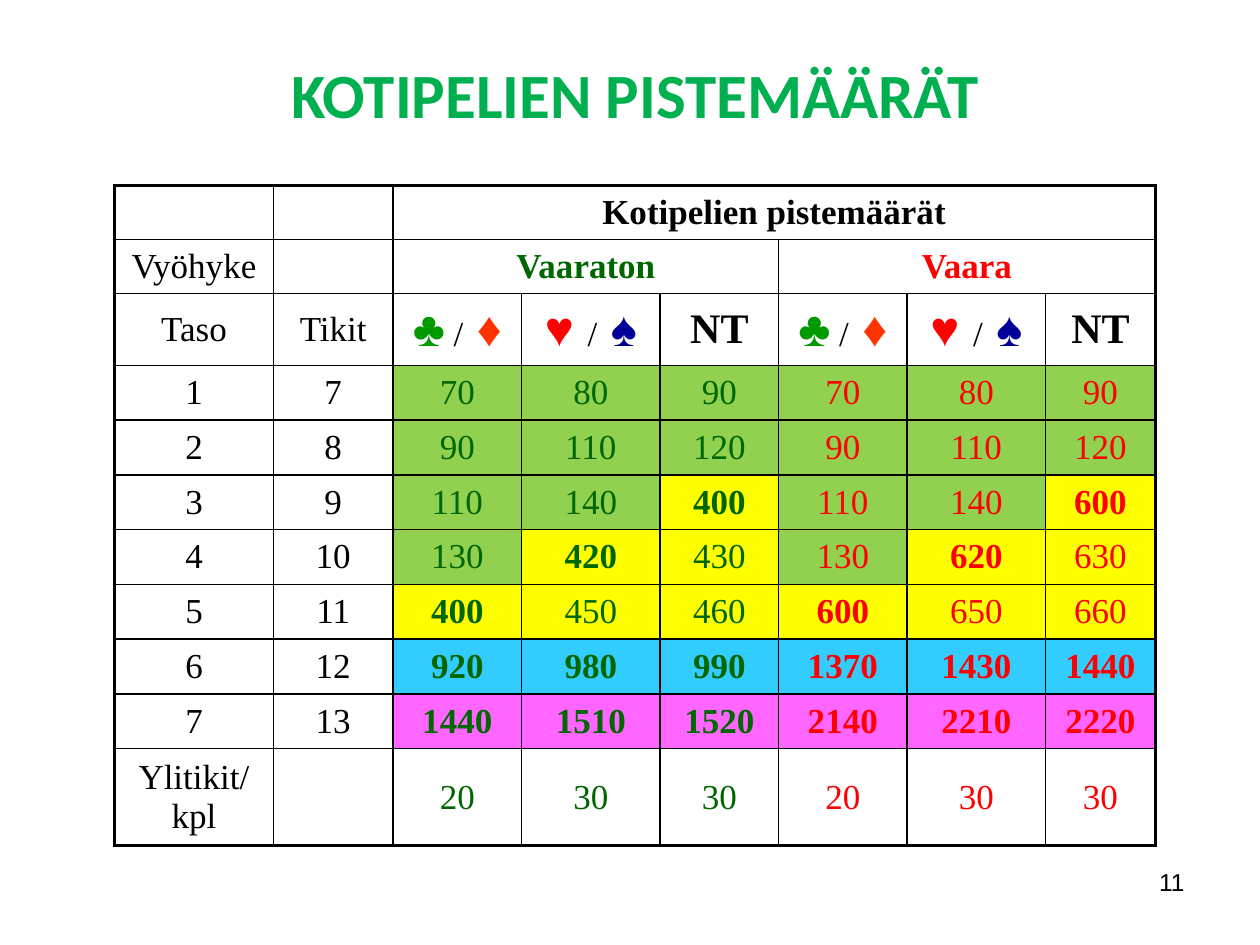
"""Builds the slide of bridge game scores by level, suit and vulnerability."""
from lxml import etree
from pptx import Presentation
from pptx import util as u
from pptx.dml.color import RGBColor
from pptx.enum import text
from pptx.oxml.ns import qn

COLORS = {
    "black": "000000", "title": "00B050", "safe": "006600", "danger": "FF0000",
    "club": "009900", "diamond": "FF3300", "heart": "FF0000", "spade": "000099",
    "part": "92D050", "game": "FFFF00", "small_slam": "33CCFF", "grand_slam": "FF66FF",
}
SERIF = "Times New Roman"
COLUMN_WIDTHS = [1.26, 0.95, 1.02, 1.1, 0.94, 1.02, 1.1, 0.87]
ROW_HEIGHTS = [0.43, 0.43, 0.57] + [0.435] * 7 + [0.77]
GAME_LEVELS = [5, 4, 3] * 2
SCORES = [
    [70, 80, 90, 70, 80, 90],
    [90, 110, 120, 90, 110, 120],
    [110, 140, 400, 110, 140, 600],
    [130, 420, 430, 130, 620, 630],
    [400, 450, 460, 600, 650, 660],
    [920, 980, 990, 1370, 1430, 1440],
    [1440, 1510, 1520, 2140, 2210, 2220],
]
OVERTRICKS = [20, 30, 30, 20, 30, 30]
MINORS = [("♣", 28, "club", False, "Arial"), (" /", 20, "black", False, SERIF),
          (" ", 28, "club", False, "Arial"), ("♦", 28, "diamond", False, "Arial")]
MAJORS = [("♥ ", 28, "heart", False, "Arial"), ("/", 20, "black", False, SERIF),
          (" ", 28, "heart", False, "Arial"), ("♠", 28, "spade", False, "Arial")]
NO_TRUMP = [("NT", 24, "black", True, SERIF)]


class ScoreSlide:
    """Holds the current slide and its style."""

    def __init__(self, deck):
        self.slide = deck.slides.add_slide(deck.slide_layouts[5])

    def add_runs(self, paragraph, runs, align=text.PP_ALIGN.CENTER):
        paragraph.alignment = align
        for words, size, color, bold, font in runs:
            for index, line in enumerate(words.split("\n")):
                if index:
                    paragraph.add_line_break()
                run = paragraph.add_run()
                run.text = line
                run.font.size = u.Pt(size)
                run.font.name = font
                run.font.bold = bold
                run.font.color.rgb = RGBColor.from_string(COLORS[color])

    def title(self, words, left, top, width, height):
        heading = self.slide.shapes.title
        heading.left, heading.top = u.Inches(left), u.Inches(top)
        heading.width, heading.height = u.Inches(width), u.Inches(height)
        frame = heading.text_frame
        frame.auto_size = text.MSO_AUTO_SIZE.NONE
        frame.vertical_anchor = text.MSO_ANCHOR.TOP
        frame.margin_top = u.Inches(0.08)
        self.add_runs(frame.paragraphs[0], [(words, 36, "title", True, "Calibri")])

    def page_number(self, number, left, top, width, height):
        box = self.slide.shapes.add_textbox(
            u.Inches(left), u.Inches(top), u.Inches(width), u.Inches(height))
        box.text_frame.word_wrap = True
        self.add_runs(box.text_frame.paragraphs[0],
                      [(number, 14, "black", False, "Arial")], text.PP_ALIGN.RIGHT)

    def table(self, left, top, widths, heights):
        frame = self.slide.shapes.add_table(
            len(heights), len(widths), u.Inches(left), u.Inches(top),
            u.Inches(sum(widths)), u.Inches(sum(heights)))
        grid = frame.table
        grid.first_row = grid.horz_banding = False
        for column, width in zip(grid.columns, widths):
            column.width = u.Inches(width)
        for row, height in zip(grid.rows, heights):
            row.height = u.Inches(height)
        return grid

    def borders(self, grid):
        last_row, last_column = len(grid.rows) - 1, len(grid.columns) - 1
        for row in range(last_row + 1):
            for column in range(last_column + 1):
                cell = grid.cell(row, column)
                cell.fill.background()
                if cell.is_spanned:
                    continue
                span = cell.span_width if cell.is_merge_origin else 1
                outer = {"L": column == 0, "R": column + span > last_column,
                         "T": row == 0, "B": row == last_row}
                properties = cell._tc.get_or_add_tcPr()
                for position, (side, is_outer) in enumerate(outer.items()):
                    line = etree.Element(qn(f"a:ln{side}"))
                    line.set("w", str(u.Pt(2.25 if is_outer else 1)))
                    paint = etree.SubElement(line, qn("a:solidFill"))
                    etree.SubElement(paint, qn("a:srgbClr")).set("val", COLORS["black"])
                    properties.insert(position, line)

    def cell(self, grid, row, column, runs, fill=None):
        target = grid.cell(row, column)
        target.vertical_anchor = text.MSO_ANCHOR.MIDDLE
        self.add_runs(target.text_frame.paragraphs[0], runs)
        if fill:
            target.fill.solid()
            target.fill.fore_color.rgb = RGBColor.from_string(COLORS[fill])

    def label(self, grid, row, column, words, color="black", bold=False, fill=None):
        self.cell(grid, row, column, [(str(words), 20, color, bold, SERIF)], fill)


def score_fill(level, game_level):
    if level >= 6:
        return "small_slam" if level == 6 else "grand_slam"
    return "game" if level >= game_level else "part"


def main():
    deck = Presentation()
    deck.slide_width, deck.slide_height = u.Inches(10), u.Inches(7.5)
    page = ScoreSlide(deck)
    page.title("KOTIPELIEN PISTEMÄÄRÄT", 0.59, 0.36, 8.9, 0.71)

    grid = page.table(0.91, 1.47, COLUMN_WIDTHS, ROW_HEIGHTS)
    for row, first, last in [(0, 2, 7), (1, 2, 4), (1, 5, 7)]:
        grid.cell(row, first).merge(grid.cell(row, last))
    page.borders(grid)

    page.label(grid, 0, 2, "Kotipelien pistemäärät", bold=True)
    page.label(grid, 1, 0, "Vyöhyke")
    page.label(grid, 1, 2, "Vaaraton", "safe", True)
    page.label(grid, 1, 5, "Vaara", "danger", True)
    page.label(grid, 2, 0, "Taso")
    page.label(grid, 2, 1, "Tikit")
    for column, suits in enumerate([MINORS, MAJORS, NO_TRUMP] * 2, start=2):
        page.cell(grid, 2, column, suits)

    zones = ["safe"] * 3 + ["danger"] * 3
    for level, scores in enumerate(SCORES, start=1):
        row = level + 2
        page.label(grid, row, 0, level)
        page.label(grid, row, 1, level + 6)
        for column, (score, zone, game) in enumerate(zip(scores, zones, GAME_LEVELS), start=2):
            page.label(grid, row, column, score, zone,
                       level >= 6 or level == game, score_fill(level, game))

    page.label(grid, 10, 0, "Ylitikit/\nkpl")
    for column, (score, zone) in enumerate(zip(OVERTRICKS, zones), start=2):
        page.label(grid, 10, column, score, zone)

    page.page_number("11", 7.17, 6.83, 2.33, 0.52)
    deck.save("out.pptx")


if __name__ == "__main__":
    main()
